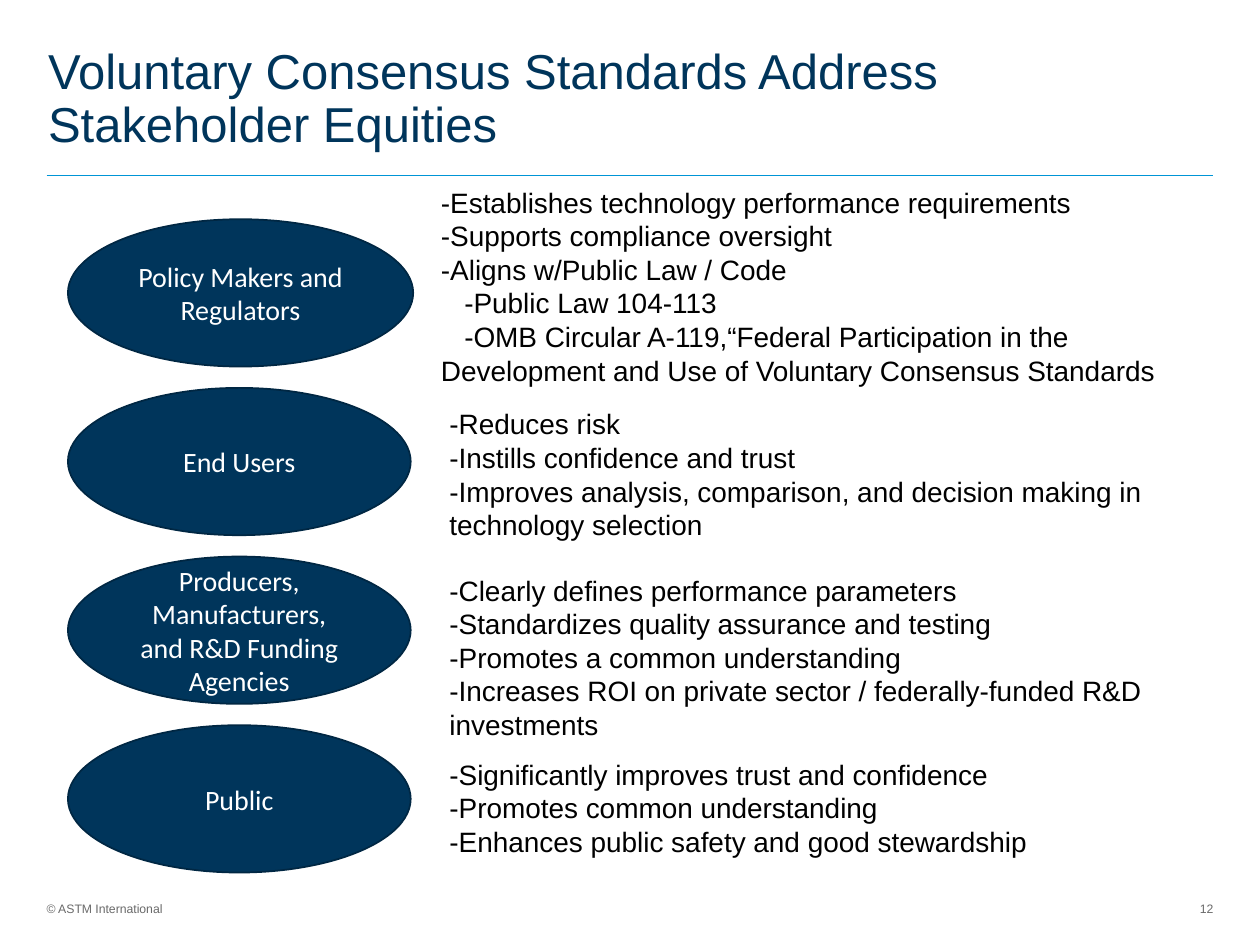
from dataclasses import dataclass

from lxml.etree import SubElement
from pptx import Presentation
from pptx.dml.color import RGBColor
from pptx.enum.shapes import MSO_CONNECTOR, MSO_SHAPE
from pptx.enum.text import MSO_ANCHOR, MSO_AUTO_SIZE, PP_ALIGN
from pptx.oxml.ns import qn
from pptx.slide import Slide
from pptx.text.text import TextFrame, _Paragraph
from pptx.util import Cm, Pt


@dataclass(frozen=True)
class Theme:
    navy: RGBColor = RGBColor(0x00, 0x35, 0x5B)
    outline: RGBColor = RGBColor(0x00, 0x27, 0x43)
    rule: RGBColor = RGBColor(0x00, 0x95, 0xD6)
    grey: RGBColor = RGBColor(0x6A, 0x6A, 0x6A)
    black: RGBColor = RGBColor(0, 0, 0)
    white: RGBColor = RGBColor(0xFF, 0xFF, 0xFF)
    text_font: str = "Arial"
    oval_font: str = "Calibri"
    title_size: float = 28
    body_size: float = 16
    footer_size: float = 7
    title_leading: float = 30
    body_leading: float = 19.2


@dataclass(frozen=True)
class Benefit:
    text: str
    indent: float = 0


@dataclass(frozen=True)
class Stakeholder:
    name: str
    oval_width: float
    left: float
    top: float
    height: float
    benefits: tuple[Benefit, ...]


THEME = Theme()
MARGIN, RIGHT_EDGE = 0.94, 24.46
OVAL_LEFT, OVAL_TOP, OVAL_HEIGHT, OVAL_PITCH = 1.37, 4.42, 2.97, 3.4
BENEFITS_WIDTH = 16.05
SUB_INDENT = 0.47

STAKEHOLDERS = (
    Stakeholder("Policy Makers and Regulators", 6.96, 8.64, 3.61, 4.37, (
        Benefit("-Establishes technology performance requirements"),
        Benefit("-Supports compliance oversight"),
        Benefit("-Aligns w/Public Law / Code"),
        Benefit("-Public Law 104-113", SUB_INDENT),
        Benefit("-OMB Circular A-119,“Federal Participation in the "
                "Development and Use of Voluntary Consensus Standards", SUB_INDENT),
    )),
    Stakeholder("End Users", 6.91, 8.81, 8.08, 3.0, (
        Benefit("-Reduces risk"),
        Benefit("-Instills confidence and trust"),
        Benefit("-Improves analysis, comparison, and decision making in "
                "technology selection"),
    )),
    Stakeholder("Producers, Manufacturers, and R&D Funding Agencies", 6.91, 8.81, 11.43, 3.68, (
        Benefit("-Clearly defines performance parameters"),
        Benefit("-Standardizes quality assurance and testing"),
        Benefit("-Promotes a common understanding"),
        Benefit("-Increases ROI on private sector / federally-funded R&D investments"),
    )),
    Stakeholder("Public", 6.91, 8.81, 15.14, 2.31, (
        Benefit("-Significantly improves trust and confidence"),
        Benefit("-Promotes common understanding"),
        Benefit("-Enhances public safety and good stewardship"),
    )),
)


def add_run(paragraph: _Paragraph, text: str, size: float, color: RGBColor,
            font: str = THEME.text_font) -> None:
    run = paragraph.add_run()
    run.text = text
    run.font.name = font
    run.font.size = Pt(size)
    run.font.color.rgb = color


def clear_insets(frame: TextFrame) -> None:
    frame.margin_left = frame.margin_right = frame.margin_top = frame.margin_bottom = 0


def add_title(slide: Slide, text: str) -> None:
    title = slide.shapes.title
    title.left, title.top, title.width, title.height = Cm(0.97), Cm(0.81), Cm(21.49), Cm(2.39)
    frame = title.text_frame
    clear_insets(frame)
    frame.word_wrap = True
    frame.auto_size = MSO_AUTO_SIZE.NONE
    frame.vertical_anchor = MSO_ANCHOR.MIDDLE
    heading = frame.paragraphs[0]
    heading.alignment = PP_ALIGN.LEFT
    heading.line_spacing = Pt(THEME.title_leading)
    add_run(heading, text, THEME.title_size, THEME.navy)


def add_rule(slide: Slide, top: float) -> None:
    rule = slide.shapes.add_connector(
        MSO_CONNECTOR.STRAIGHT, Cm(MARGIN), Cm(top), Cm(RIGHT_EDGE), Cm(top))
    rule.line.color.rgb = THEME.rule
    rule.line.width = Pt(0.5)
    SubElement(rule._element.spPr, qn("a:effectLst"))


def add_footer(slide: Slide, text: str, left: float, width: float, align: PP_ALIGN) -> None:
    footer = slide.shapes.add_textbox(Cm(left), Cm(18.16), Cm(width), Cm(0.32))
    frame = footer.text_frame
    clear_insets(frame)
    frame.word_wrap = True
    frame.vertical_anchor = MSO_ANCHOR.MIDDLE
    frame.paragraphs[0].alignment = align
    add_run(frame.paragraphs[0], text, THEME.footer_size, THEME.grey)


def add_oval(slide: Slide, stakeholder: Stakeholder, top: float) -> None:
    oval = slide.shapes.add_shape(
        MSO_SHAPE.OVAL, Cm(OVAL_LEFT), Cm(top), Cm(stakeholder.oval_width), Cm(OVAL_HEIGHT))
    oval.shadow.inherit = False
    oval.fill.solid()
    oval.fill.fore_color.rgb = THEME.navy
    oval.line.color.rgb = THEME.outline
    oval.line.width = Pt(1)
    frame = oval.text_frame
    frame.word_wrap = True
    frame.vertical_anchor = MSO_ANCHOR.MIDDLE
    label = frame.paragraphs[0]
    label.alignment = PP_ALIGN.CENTER
    label.line_spacing = Pt(THEME.body_leading)
    add_run(label, stakeholder.name, THEME.body_size, THEME.white, THEME.oval_font)


def add_benefits(slide: Slide, stakeholder: Stakeholder) -> None:
    panel = slide.shapes.add_textbox(
        Cm(stakeholder.left), Cm(stakeholder.top), Cm(BENEFITS_WIDTH), Cm(stakeholder.height))
    frame = panel.text_frame
    frame.word_wrap = True
    for index, benefit in enumerate(stakeholder.benefits):
        line = frame.add_paragraph() if index else frame.paragraphs[0]
        line.line_spacing = Pt(THEME.body_leading)
        if benefit.indent:
            properties = line._p.get_or_add_pPr()
            properties.set("marL", "0")
            properties.set("indent", str(Cm(benefit.indent)))
        add_run(line, benefit.text, THEME.body_size, THEME.black)


def main() -> None:
    deck = Presentation()
    deck.slide_width, deck.slide_height = Cm(25.4), Cm(19.05)
    slide = deck.slides.add_slide(deck.slide_layouts[5])
    add_title(slide, "Voluntary Consensus Standards Address Stakeholder Equities")
    add_rule(slide, 3.53)
    add_footer(slide, "© ASTM International", MARGIN, 2.87, PP_ALIGN.LEFT)
    add_footer(slide, "12", RIGHT_EDGE - 1.24, 1.24, PP_ALIGN.RIGHT)
    for row, stakeholder in enumerate(STAKEHOLDERS):
        add_oval(slide, stakeholder, OVAL_TOP + row * OVAL_PITCH)
        add_benefits(slide, stakeholder)
    deck.save("out.pptx")


if __name__ == "__main__":
    main()
